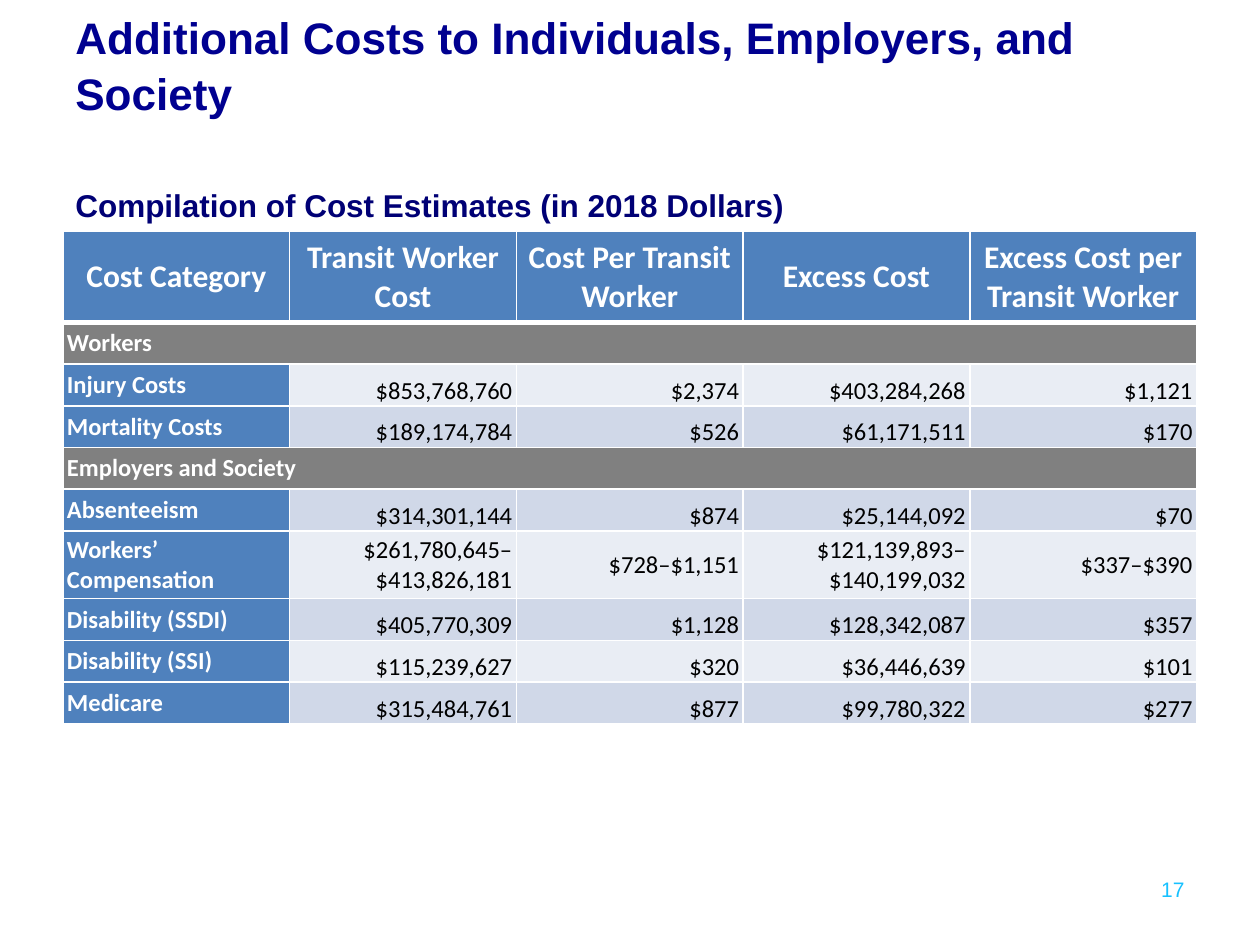
from dataclasses import dataclass

from lxml import etree
from pptx import Presentation
from pptx.dml.color import RGBColor
from pptx.enum.text import MSO_ANCHOR, PP_ALIGN
from pptx.oxml.ns import qn
from pptx.util import Cm, Pt

LEFT, CENTER, RIGHT = PP_ALIGN.LEFT, PP_ALIGN.CENTER, PP_ALIGN.RIGHT
TOP, MIDDLE, BOTTOM = MSO_ANCHOR.TOP, MSO_ANCHOR.MIDDLE, MSO_ANCHOR.BOTTOM


@dataclass(frozen=True)
class Theme:
    title: str = "000090"
    caption: str = "000075"
    page_number: str = "17C1FF"
    white: str = "FFFFFF"
    black: str = "000000"
    header: str = "4F81BD"
    section: str = "808080"
    bands: tuple = ("E9EDF4", "D0D8E8")
    heading_font: str = "Arial"
    table_font: str = "Calibri"
    title_size: float = 25.2
    large_size: float = 18
    body_size: float = 14
    small_size: float = 12
    thin_border: float = 1
    thick_border: float = 3


@dataclass(frozen=True)
class TextStyle:
    font: str
    size: float
    color: str
    bold: bool = False
    align: PP_ALIGN = LEFT
    anchor: MSO_ANCHOR = MIDDLE


@dataclass(frozen=True)
class Label:
    text: str
    left: float
    top: float
    width: float
    height: float
    style: TextStyle
    line_spacing: float = 1.0


@dataclass(frozen=True)
class CostRow:
    name: str
    values: tuple = ()
    height: float = 0.84
    anchor: MSO_ANCHOR = BOTTOM


THEME = Theme()
HEADER_STYLE = TextStyle(THEME.table_font, THEME.large_size, THEME.white, True, CENTER)
NAME_STYLE = TextStyle(THEME.table_font, THEME.body_size, THEME.white, True)

LABELS = (
    Label("Additional Costs to Individuals, Employers, and Society",
          1.27, 0, 21.74, 2.57,
          TextStyle(THEME.heading_font, THEME.title_size, THEME.title, True), 1.05),
    Label("17", 22.3, 17.58, 1.83, 0.69,
          TextStyle(THEME.heading_font, THEME.small_size, THEME.page_number, align=RIGHT)),
    Label("Compilation of Cost Estimates (in 2018 Dollars)",
          1.27, 3.63, 16.43, 1.02,
          TextStyle(THEME.heading_font, THEME.large_size, THEME.caption, True, anchor=TOP)),
)

HEADINGS = ("Cost Category", "Transit Worker Cost", "Cost Per Transit Worker",
            "Excess Cost", "Excess Cost per Transit Worker")
HEADER_HEIGHT = 1.83
COLUMN_WIDTH = 4.57

# A row without values is a section heading
COST_ROWS = (
    CostRow("Workers"),
    CostRow("Injury Costs", ("$853,768,760", "$2,374", "$403,284,268", "$1,121")),
    CostRow("Mortality Costs", ("$189,174,784", "$526", "$61,171,511", "$170")),
    CostRow("Employers and Society"),
    CostRow("Absenteeism", ("$314,301,144", "$874", "$25,144,092", "$70")),
    CostRow("Workers’ Compensation",
            ("$261,780,645–$413,826,181", "$728–$1,151",
             "$121,139,893–$140,199,032", "$337–$390"), 1.37, MIDDLE),
    CostRow("Disability (SSDI)", ("$405,770,309", "$1,128", "$128,342,087", "$357")),
    CostRow("Disability (SSI)", ("$115,239,627", "$320", "$36,446,639", "$101")),
    CostRow("Medicare", ("$315,484,761", "$877", "$99,780,322", "$277")),
)


def style_paragraph(para, style: TextStyle) -> None:
    para.alignment = style.align
    for span in para.runs:
        span.font.name = style.font
        span.font.size = Pt(style.size)
        span.font.bold = style.bold
        span.font.color.rgb = RGBColor.from_string(style.color)


def add_label(page, label: Label) -> None:
    box = page.shapes.add_textbox(Cm(label.left), Cm(label.top),
                                  Cm(label.width), Cm(label.height))
    frame = box.text_frame
    frame.word_wrap = True
    frame.vertical_anchor = label.style.anchor
    frame.text = label.text
    para = frame.paragraphs[0]
    para.line_spacing = label.line_spacing
    style_paragraph(para, label.style)


def set_borders(cell, top: float, bottom: float) -> None:
    properties = cell._tc.get_or_add_tcPr()
    thin = THEME.thin_border
    for side, width in (("L", thin), ("R", thin), ("T", top), ("B", bottom)):
        line = etree.SubElement(properties, qn(f"a:ln{side}"), w=str(Pt(width)))
        fill = etree.SubElement(line, qn("a:solidFill"))
        etree.SubElement(fill, qn("a:srgbClr"), val=THEME.white)


def fill_cell(cell, text: str, fill: str, style: TextStyle,
              top: float = THEME.thin_border, bottom: float = THEME.thin_border) -> None:
    cell.margin_left = cell.margin_right = Cm(0.08)
    cell.margin_top = cell.margin_bottom = 0
    cell.vertical_anchor = style.anchor
    set_borders(cell, top, bottom)  # borders must precede the fill
    cell.fill.solid()
    cell.fill.fore_color.rgb = RGBColor.from_string(fill)
    cell.text_frame.text = text
    style_paragraph(cell.text_frame.paragraphs[0], style)


def add_cost_table(page) -> None:
    columns = len(HEADINGS)
    height = HEADER_HEIGHT + sum(row.height for row in COST_ROWS)
    table = page.shapes.add_table(len(COST_ROWS) + 1, columns, Cm(1.27), Cm(4.67),
                                  Cm(COLUMN_WIDTH * columns), Cm(height)).table
    for column in table.columns:
        column.width = Cm(COLUMN_WIDTH)

    # Header row
    table.rows[0].height = Cm(HEADER_HEIGHT)
    for index, heading in enumerate(HEADINGS):
        fill_cell(table.cell(0, index), heading, THEME.header, HEADER_STYLE,
                  bottom=THEME.thick_border)

    # Section and cost rows
    for number, row in enumerate(COST_ROWS, start=1):
        table.rows[number].height = Cm(row.height)
        top = THEME.thick_border if number == 1 else THEME.thin_border
        first = table.cell(number, 0)
        if not row.values:
            for index in range(columns):
                fill_cell(table.cell(number, index), row.name if index == 0 else "",
                          THEME.section, NAME_STYLE, top)
            first.merge(table.cell(number, columns - 1))
            continue
        fill_cell(first, row.name, THEME.header, NAME_STYLE, top)
        value_style = TextStyle(THEME.table_font, THEME.body_size, THEME.black,
                                align=RIGHT, anchor=row.anchor)
        for index, value in enumerate(row.values, start=1):
            fill_cell(table.cell(number, index), value, THEME.bands[number % 2],
                      value_style, top)


def main() -> None:
    deck = Presentation()
    deck.slide_width, deck.slide_height = Cm(25.4), Cm(19.05)
    page = deck.slides.add_slide(deck.slide_layouts[6])
    add_cost_table(page)
    for label in LABELS:
        add_label(page, label)
    deck.save("out.pptx")


if __name__ == "__main__":
    main()
